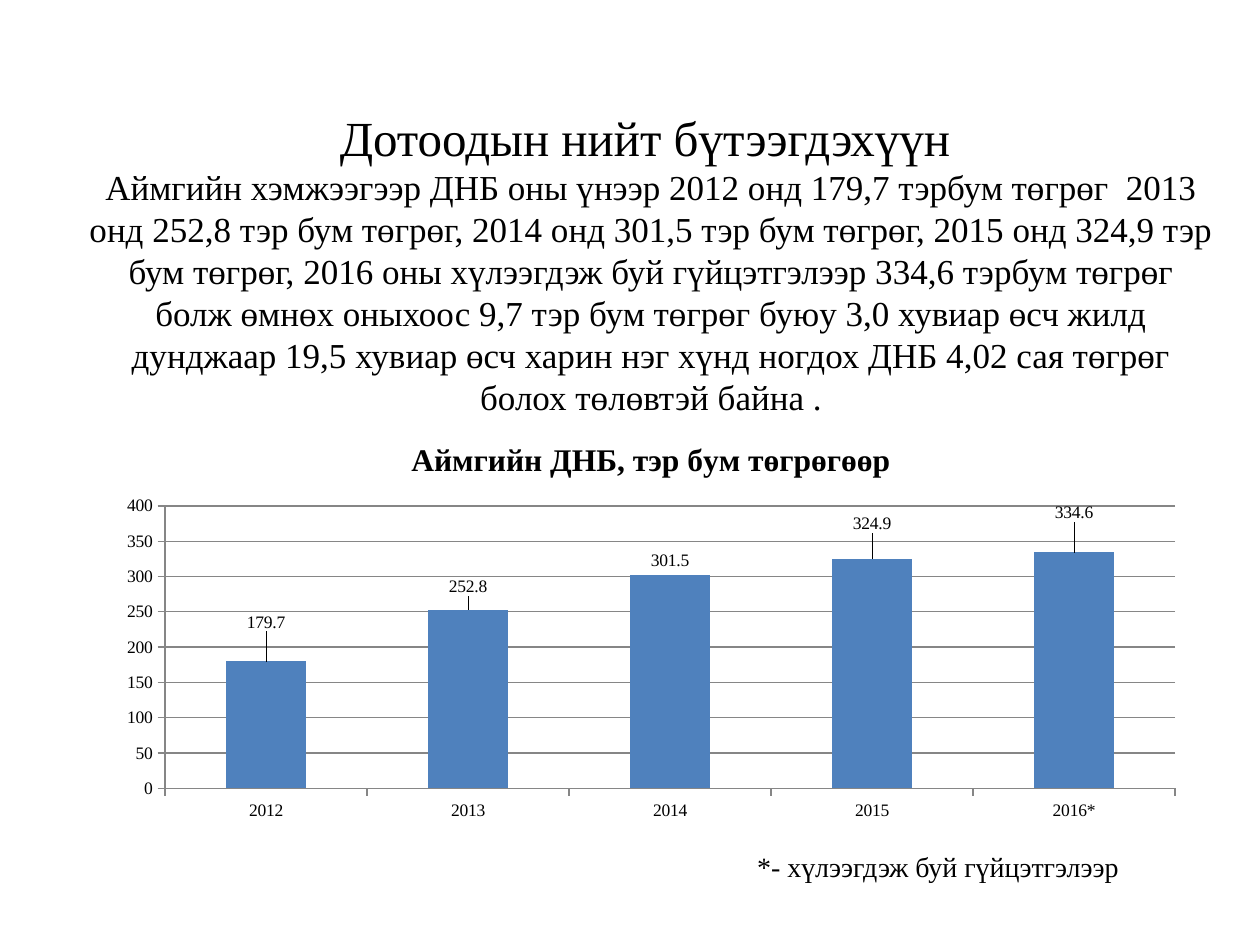
from lxml import etree
from pptx import Presentation
from pptx import util as u
from pptx.chart import data as chart_data
from pptx.dml import color
from pptx.enum import chart as kinds, text
from pptx.oxml import ns

FONT = "Times New Roman"
BLACK, GREY, BLUE = "000000", "868686", "4F81BD"
HEADING = "Дотоодын нийт бүтээгдэхүүн "
SUMMARY = (
    "Аймгийн хэмжээгээр ДНБ оны үнээр 2012 онд 179,7 тэрбум төгрөг  2013 онд "
    "252,8 тэр бум төгрөг, 2014 онд 301,5 тэр бум төгрөг, 2015 онд 324,9 тэр бум "
    "төгрөг, 2016 оны хүлээгдэж буй гүйцэтгэлээр 334,6 тэрбум төгрөг болж өмнөх "
    "оныхоос 9,7 тэр бум төгрөг буюу 3,0 хувиар өсч жилд дунджаар 19,5 хувиар өсч "
    "харин нэг хүнд ногдох ДНБ 4,02 сая төгрөг болох төлөвтэй байна ."
)
CHART_TITLE = "Аймгийн ДНБ, тэр бум төгрөгөөр"
FOOTNOTE = "*- хүлээгдэж буй гүйцэтгэлээр"
YEARS = ["2012", "2013", "2014", "2015", "2016*"]
GDP = [179.7, 252.8, 301.5, 324.9, 334.6]
LABEL_SHIFTS = [-0.06, -0.02, 0, -0.05, -0.06]


def rgb(code):
    return color.RGBColor.from_string(code)


def style_font(font, size, bold=False):
    font.name = FONT
    font.size = u.Pt(size)
    font.bold = bold
    font.color.rgb = rgb(BLACK)


def add_text(page, left, top, width, height, content, sizes):
    box = page.shapes.add_textbox(u.Pt(left), u.Pt(top), u.Pt(width), u.Pt(height))
    frame = box.text_frame
    frame.word_wrap = True
    frame.vertical_anchor = text.MSO_ANCHOR.MIDDLE
    para = frame.paragraphs[0]
    para.text = content
    para.alignment = text.PP_ALIGN.CENTER
    for span, size in zip(para.runs, sizes):
        style_font(span.font, size)


def make_layout(**settings):
    layout = etree.Element(ns.qn("c:layout"))
    manual = etree.SubElement(layout, ns.qn("c:manualLayout"))
    for name, value in settings.items():
        etree.SubElement(manual, ns.qn(f"c:{name}")).set("val", str(value))
    return layout


def place_plot(chart):
    area = chart._chartSpace.chart.plotArea
    for old in area.findall(ns.qn("c:layout")):
        area.remove(old)
    area.insert(0, make_layout(layoutTarget="inner", xMode="edge", yMode="edge",
                               x=0.055, y=0.21, w=0.925, h=0.69))


def style_axis(axis):
    axis.major_tick_mark = kinds.XL_TICK_MARK.OUTSIDE
    axis.minor_tick_mark = kinds.XL_TICK_MARK.NONE
    axis.format.line.color.rgb = rgb(GREY)
    style_font(axis.tick_labels.font, 10)


def label_points(series):
    for index, shift in enumerate(LABEL_SHIFTS):
        label = series.points[index].data_label
        style_font(label.font, 10)
        label.position = kinds.XL_LABEL_POSITION.OUTSIDE_END
    for element, shift in zip(series._element.iter(ns.qn("c:dLbl")), LABEL_SHIFTS):
        if shift:
            element.insert(1, make_layout(x=0, y=shift))


def add_column_chart(page, left, top, width, height):
    data = chart_data.CategoryChartData()
    data.categories = YEARS
    data.add_series("Series 1", GDP)
    chart = page.shapes.add_chart(
        kinds.XL_CHART_TYPE.COLUMN_CLUSTERED,
        u.Pt(left), u.Pt(top), u.Pt(width), u.Pt(height), data).chart
    style_font(chart.font, 10)
    chart.has_legend = False
    chart.has_title = True
    title = chart.chart_title.text_frame
    title.text = CHART_TITLE
    style_font(title.paragraphs[0].runs[0].font, 18, bold=True)
    style_axis(chart.category_axis)
    values = chart.value_axis
    style_axis(values)
    values.minimum_scale, values.maximum_scale, values.major_unit = 0, 400, 50
    values.has_major_gridlines = True
    values.major_gridlines.format.line.color.rgb = rgb(GREY)
    plot = chart.plots[0]
    plot.gap_width = 150
    plot.vary_by_categories = False
    series = plot.series[0]
    series.format.fill.solid()
    series.format.fill.fore_color.rgb = rgb(BLUE)
    label_points(series)
    place_plot(chart)


def main():
    deck = Presentation()
    deck.slide_width, deck.slide_height = u.Pt(720), u.Pt(540)
    page = deck.slides.add_slide(deck.slide_layouts[6])
    add_text(page, 42, 54, 660, 192, HEADING + "\v" + SUMMARY, [28, 20])
    add_column_chart(page, 60, 240, 624, 234)
    add_text(page, 396, 480, 280, 30, FOOTNOTE, [16])
    deck.save("out.pptx")


if __name__ == "__main__":
    main()
